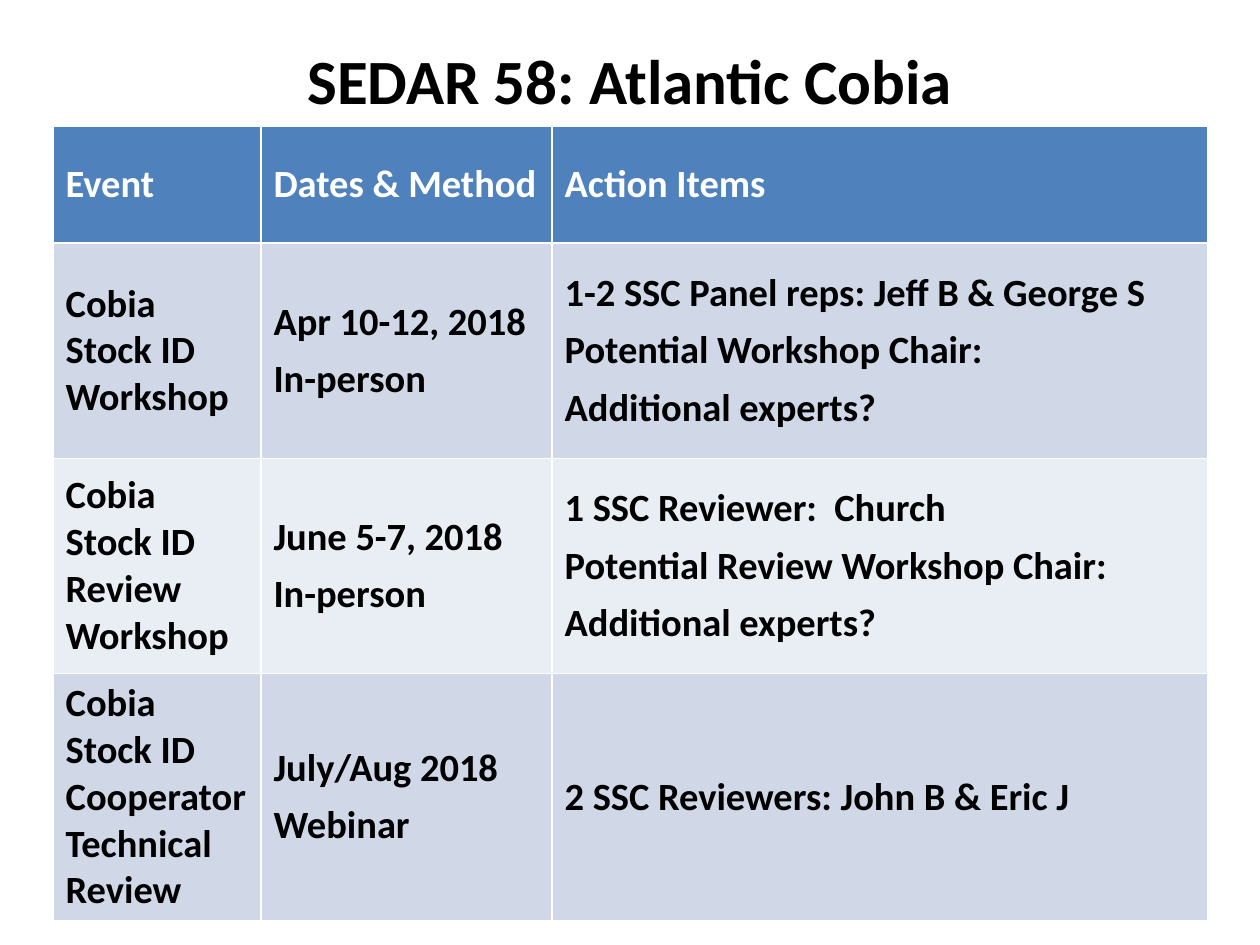
from pptx import Presentation
from pptx.dml.color import RGBColor
from pptx.enum.text import MSO_ANCHOR, PP_ALIGN
from pptx.util import Cm, Pt

MIDDLE = MSO_ANCHOR.MIDDLE
CENTER = PP_ALIGN.CENTER
TITLE_ONLY = 5

COLORS = {
    "header": "4F81BD",
    "odd_row": "D0D8E8",
    "even_row": "E9EDF4",
    "header_text": "FFFFFF",
    "text": "000000",
}
TITLE_FONT = {"name": "Calibri", "size": Pt(36), "bold": True}
TABLE_FONT = {"name": "Calibri", "size": Pt(22), "bold": True}

COLUMN_WIDTHS = [4.19, 5.87, 13.22]
ROW_HEIGHTS = [2.36, 4.34, 4.34, 4.34]
ROWS = [
    [["Event"], ["Dates & Method"], ["Action Items"]],
    [
        ["Cobia Stock ID Workshop"],
        ["Apr 10-12, 2018", "In-person"],
        ["1-2 SSC Panel reps: Jeff B & George S",
         "Potential Workshop Chair:", "Additional experts?"],
    ],
    [
        ["Cobia Stock ID Review Workshop"],
        ["June 5-7, 2018", "In-person"],
        ["1 SSC Reviewer:  Church",
         "Potential Review Workshop Chair:", "Additional experts?"],
    ],
    [
        ["Cobia Stock ID Cooperator Technical Review"],
        ["July/Aug 2018", "Webinar"],
        ["2 SSC Reviewers: John B & Eric J"],
    ],
]


def format_font(font, values, color):
    for name, value in values.items():
        setattr(font, name, value)
    font.color.rgb = RGBColor.from_string(COLORS[color])


presentation = Presentation()
presentation.slide_width = Cm(25.4)
presentation.slide_height = Cm(19.05)
slide = presentation.slides.add_slide(presentation.slide_layouts[TITLE_ONLY])

title = slide.shapes.title
title.left, title.top = Cm(0), Cm(0)
title.width, title.height = Cm(25.4), Cm(3.18)
title.text_frame.text = "SEDAR 58: Atlantic Cobia"
title.text_frame.vertical_anchor = MIDDLE
paragraph = title.text_frame.paragraphs[0]
paragraph.alignment = CENTER
format_font(paragraph.runs[0].font, TITLE_FONT, "text")

# The default table style supplies the white cell borders.
table = slide.shapes.add_table(
    len(ROWS), len(COLUMN_WIDTHS), Cm(1.07), Cm(2.54),
    Cm(sum(COLUMN_WIDTHS)), Cm(sum(ROW_HEIGHTS)),
).table
for column, width in zip(table.columns, COLUMN_WIDTHS):
    column.width = Cm(width)
for row, height in zip(table.rows, ROW_HEIGHTS):
    row.height = Cm(height)

for row_index, row in enumerate(ROWS):
    is_header = row_index == 0
    fill_color = "header" if is_header else "odd_row" if row_index % 2 else "even_row"
    text_color = "header_text" if is_header else "text"
    for column_index, lines in enumerate(row):
        cell = table.cell(row_index, column_index)
        cell.vertical_anchor = MIDDLE
        cell.fill.solid()
        cell.fill.fore_color.rgb = RGBColor.from_string(COLORS[fill_color])
        cell.text_frame.text = "\n".join(lines)
        for paragraph in cell.text_frame.paragraphs:
            if not is_header and column_index > 0:
                paragraph.space_after = Pt(6)
            format_font(paragraph.runs[0].font, TABLE_FONT, text_color)

presentation.save("out.pptx")
